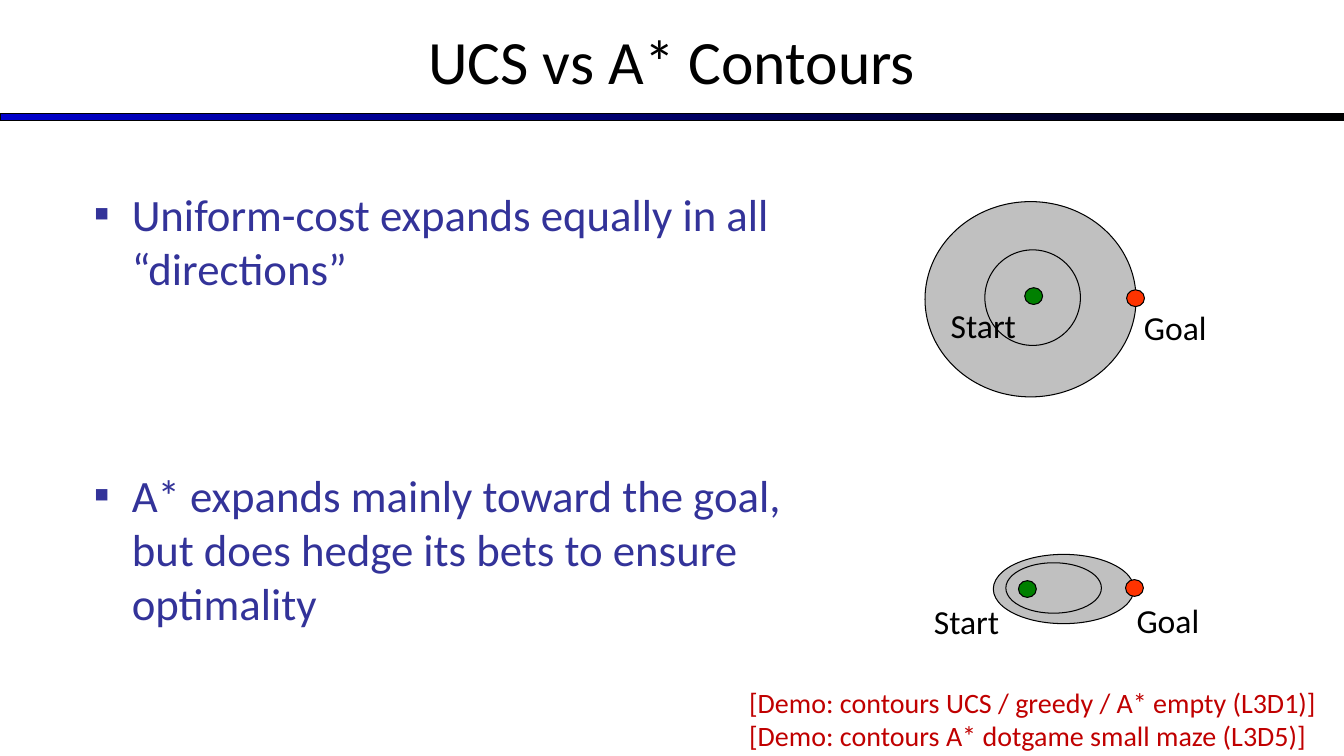
"""Build the slide comparing UCS and A* search contours."""
from lxml.etree import SubElement
from pptx import Presentation
from pptx.dml.color import RGBColor
from pptx.enum.shapes import MSO_SHAPE
from pptx.enum.text import MSO_ANCHOR, PP_ALIGN
from pptx.oxml.ns import qn
from pptx.util import Pt

PX = 9525
COLORS = {
    "blue": "0000CC", "black": "000000", "gray": "C0C0C0", "green": "008000",
    "orange": "FF3300", "indigo": "333399", "red": "C00000",
}

presentation = Presentation()
presentation.slide_width = 1280 * PX
presentation.slide_height = 720 * PX
slide = presentation.slides.add_slide(presentation.slide_layouts[6])


def add_outlined(kind, box, color=None):
    shape = slide.shapes.add_shape(kind, *[value * PX for value in box])
    shape.shadow.inherit = False
    shape.line.color.rgb = RGBColor.from_string(COLORS["black"])
    shape.line.width = Pt(0.75)
    if color:
        shape.fill.solid()
        shape.fill.fore_color.rgb = RGBColor.from_string(COLORS[color])
    else:
        shape.fill.background()
    return shape


def add_text(box, lines, size, color="black", **formats):
    frame = slide.shapes.add_textbox(*[value * PX for value in box]).text_frame
    frame.word_wrap = True
    frame.text = "\n".join(lines)
    for paragraph in frame.paragraphs:
        font = paragraph.runs[0].font
        font.color.rgb = RGBColor.from_string(COLORS[color])
        for name, value in {"name": "Calibri", "size": Pt(size)}.items():
            setattr(font, name, value)
        for name, value in formats.items():
            setattr(paragraph, name, value)
    return frame


bar = add_outlined(MSO_SHAPE.RECTANGLE, (0, 108, 1280, 7))
bar.fill.gradient()
bar.fill.gradient_angle = 0
for stop, color in zip(bar.fill.gradient_stops, ("blue", "black")):
    stop.color.rgb = RGBColor.from_string(COLORS[color])

title = add_text((0, -3, 1280, 120), ["UCS vs A* Contours"], 44, alignment=PP_ALIGN.CENTER)
title.vertical_anchor = MSO_ANCHOR.MIDDLE

body = add_text((80, 173, 704, 475), [
    "Uniform-cost expands equally in all “directions”",
    "A* expands mainly toward the goal, but does hedge its bets to ensure optimality",
], 32, "indigo")
for paragraph in body.paragraphs:
    properties = paragraph._p.get_or_add_pPr()
    properties.set("marL", str(36 * PX))
    properties.set("indent", str(-36 * PX))
    SubElement(properties, qn("a:buFont")).set("typeface", "Calibri")
    SubElement(properties, qn("a:buChar")).set("char", "▪")
body.paragraphs[1].space_before = Pt(124)

contours = [
    {"outer": (881, 192, 201, 186), "inner": (938, 238, 91, 91),
     "points": [("Start", "green", (976, 274), (896, 286)),
                ("Goal", "orange", (1073, 276), (1080, 288))]},
    {"outer": (946, 528, 134, 66), "inner": (958, 536, 91, 48),
     "points": [("Start", "green", (970, 553), (880, 568)),
                ("Goal", "orange", (1072, 552), (1073, 567))]},
]
for contour in contours:
    add_outlined(MSO_SHAPE.OVAL, contour["outer"], "gray")
    for label, color, dot, corner in contour["points"]:
        add_outlined(MSO_SHAPE.OVAL, (*dot, 17, 16), color)
        add_text((*corner, 96, 48), [label], 24)
    add_outlined(MSO_SHAPE.OVAL, contour["inner"])

add_text((704, 648, 576, 74), [
    "[Demo: contours UCS / greedy / A* empty (L3D1)]",
    "[Demo: contours A* dotgame small maze (L3D5)]",
], 20, "red")

presentation.save("out.pptx")
